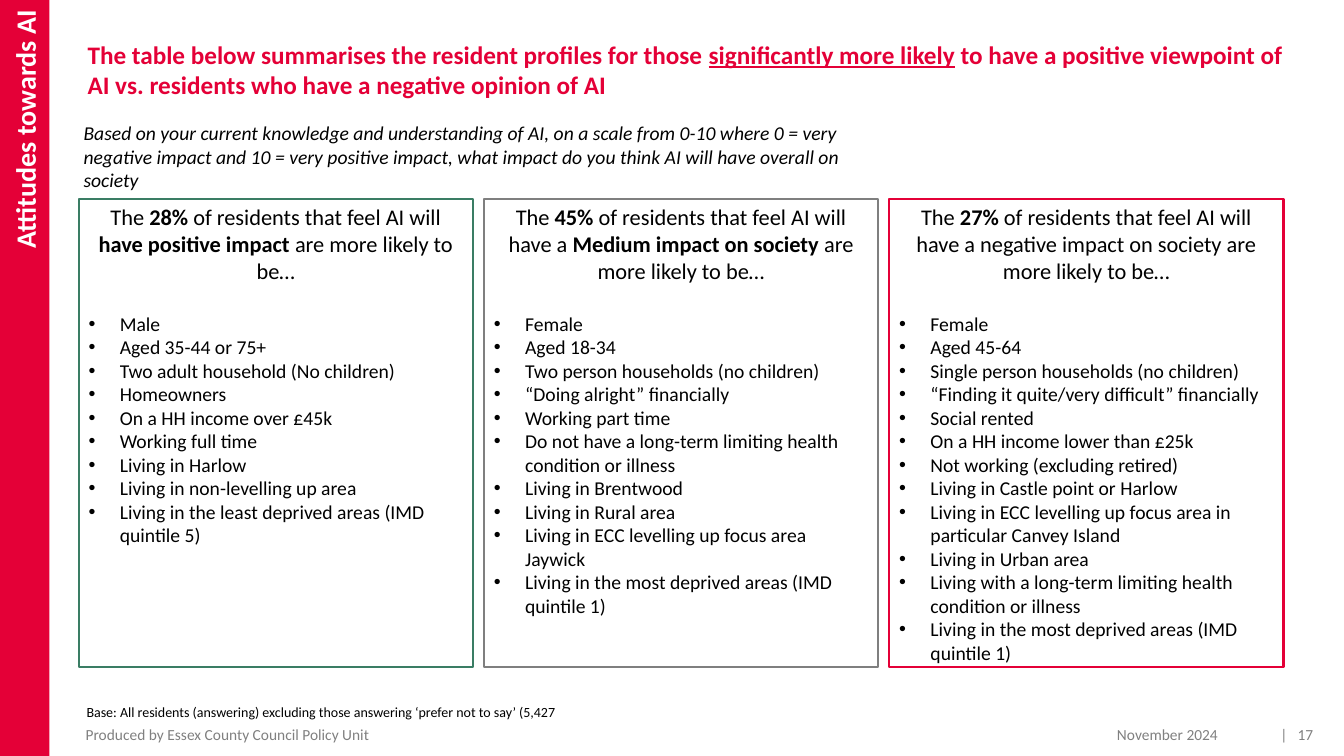
from lxml.etree import SubElement as Sub
from pptx import Presentation
from pptx.dml.color import RGBColor as Rgb
from pptx.enum.shapes import MSO_SHAPE as Shape
from pptx.enum.text import MSO_ANCHOR as Anchor, PP_ALIGN as Align
from pptx.oxml.ns import qn
from pptx.util import Inches, Pt

HUES = {"red": "E40037", "green": "3A7D64", "grey": "7F7F7F",
        "foot": "808080", "black": "000000", "white": "FFFFFF"}

CARDS = [
    ("green", "The *28% *of residents that feel AI will *have positive impact *are more likely to be…", [
        "Male", "Aged 35-44 or 75+", "Two adult household (No children)",
        "Homeowners", "On a HH income over £45k", "Working full time",
        "Living in Harlow", "Living in non-levelling up area",
        "Living in the least deprived areas (IMD quintile 5)"]),
    ("grey", "The *45% *of residents that feel AI will have a *Medium impact on society* are more likely to be…", [
        "Female", "Aged 18-34", "Two person households (no children)",
        "“Doing alright” financially", "Working part time",
        "Do not have a long-term limiting health condition or illness",
        "Living in Brentwood", "Living in Rural area",
        "Living in ECC levelling up focus area Jaywick",
        "Living in the most deprived areas (IMD quintile 1)"]),
    ("red", "The *27% *of residents that feel AI will have a negative impact on society are more likely to be…", [
        "Female", "Aged 45-64", "Single person households (no children)",
        "“Finding it quite/very difficult” financially", "Social rented",
        "On a HH income lower than £25k", "Not working (excluding retired)",
        "Living in Castle point or Harlow",
        "Living in ECC levelling up focus area in particular Canvey Island",
        "Living in Urban area",
        "Living with a long-term limiting health condition or illness",
        "Living in the most deprived areas (IMD quintile 1)"]),
]


def color(name):
    return Rgb.from_string(HUES[name])


def style(para, size, hue="black", bold=False, italic=False):
    font = para.font
    font.name, font.size = "Calibri", Pt(size)
    font.bold, font.italic = bold, italic
    font.color.rgb = color(hue)


def mark(para, text, trait):
    """Add runs; pieces between asterisks get the given font trait."""
    for i, piece in enumerate(text.split("*")):
        run = para.add_run()
        run.text = piece
        if i % 2:
            setattr(run.font, trait, True)


def setup(frame, pads, anchor=Anchor.TOP):
    frame.word_wrap = True
    frame.vertical_anchor = anchor
    (frame.margin_left, frame.margin_top,
     frame.margin_right, frame.margin_bottom) = map(Inches, pads)


def label(slide, box, pads=(0.1, 0.05, 0.1, 0.05), anchor=Anchor.TOP):
    frame = slide.shapes.add_textbox(*map(Inches, box)).text_frame
    setup(frame, pads, anchor)
    return frame.paragraphs[0]


def panel(slide, box):
    shape = slide.shapes.add_shape(Shape.RECTANGLE, *map(Inches, box))
    shape.shadow.inherit = False
    return shape


def sidebar(slide, box):
    bar = panel(slide, box)
    bar.fill.solid()
    bar.fill.fore_color.rgb = color("red")
    bar.line.fill.background()
    frame = bar.text_frame
    setup(frame, (0.1, 0.1, 0.1, 0.05), Anchor.MIDDLE)
    frame._txBody.bodyPr.set("vert", "vert270")
    para = frame.paragraphs[0]
    para.text = "Attitudes towards AI"
    para.alignment = Align.RIGHT
    style(para, 20, "white", bold=True)


def header(slide, box):
    x, y, wide, high = box
    title = label(slide, box, (0.1, 0.05, 0.1, 0))
    mark(title, "The table below summarises the resident profiles for those "
         "*significantly more likely* to have a positive viewpoint of AI vs. "
         "residents who have a negative opinion of AI", "underline")
    style(title, 18, "red", bold=True)
    ask = label(slide, (x - 0.04, y + 0.81, 7.95, 0.81))
    ask.text = ("Based on your current knowledge and understanding of AI, on a "
                "scale from 0-10 where 0 = very negative impact and 10 = very "
                "positive impact, what impact do you think AI will have overall "
                "on society")
    style(ask, 14, italic=True)


def card(slide, box, hue, head, items):
    shape = panel(slide, box)
    shape.fill.background()
    shape.line.color.rgb = color(hue)
    shape.line.width = Pt(1.5)
    frame = shape.text_frame
    setup(frame, (0.1, 0.05, 0.1, 0.05))
    para = frame.paragraphs[0]
    mark(para, head, "bold")
    para.alignment = Align.CENTER
    style(para, 16)
    for i, item in enumerate(items):
        para = frame.add_paragraph()
        para.text = item
        para.alignment = Align.LEFT
        if i == 0:
            para.space_before = Pt(19.5)
        props = para._p.get_or_add_pPr()
        props.set("marL", str(Inches(0.31)))
        props.set("indent", str(-Inches(0.31)))
        Sub(props, qn("a:buFont"), typeface="Arial")
        Sub(props, qn("a:buChar"), char="•")
        style(para, 14)


def cards(slide, box, gap=0.11):
    x, y, wide, high = box
    each = (wide - gap * (len(CARDS) - 1)) / len(CARDS)
    for i, data in enumerate(CARDS):
        card(slide, (x + i * (each + gap), y, each, high), *data)


def footer(slide, box):
    x, y, wide, high = box
    base = label(slide, (x, y, 11.41, 0.27))
    base.text = "Base: All residents (answering) excluding those answering ‘prefer not to say’ (5,427"
    style(base, 10)

    # Credit, date and page number share one line
    line, tall = y + 0.28, 0.15
    parts = [
        ("Produced by Essex County Council Policy Unit", x, 6.54, 0.09, Align.LEFT),
        ("November 2024", x + 8.92, 2.4, 0.1, Align.RIGHT),
        ("|\t17", x + wide - 0.85, 1.1, 0.53, Align.LEFT),
    ]
    for text, left, span, pad, align in parts:
        para = label(slide, (left, line, span, tall),
                     (pad, 0.05, 0, 0.05), Anchor.MIDDLE)
        para.text = text
        para.alignment = align
        if "\t" in text:
            tabs = Sub(para._p.get_or_add_pPr(), qn("a:tabLst"))
            Sub(tabs, qn("a:tab"), pos=str(Inches(0.17)), algn="l")
        style(para, 11, "foot")


def main():
    deck = Presentation()
    deck.slide_width, deck.slide_height = Inches(13.33), Inches(7.5)
    slide = deck.slides.add_slide(deck.slide_layouts[6])
    sidebar(slide, (0, 0, 0.49, 7.5))
    header(slide, (0.77, 0.34, 12.25, 1.18))
    cards(slide, (0.78, 1.97, 11.95, 4.65))
    footer(slide, (0.76, 6.93, 12.26, 0.43))
    deck.save("out.pptx")


if __name__ == "__main__":
    main()
